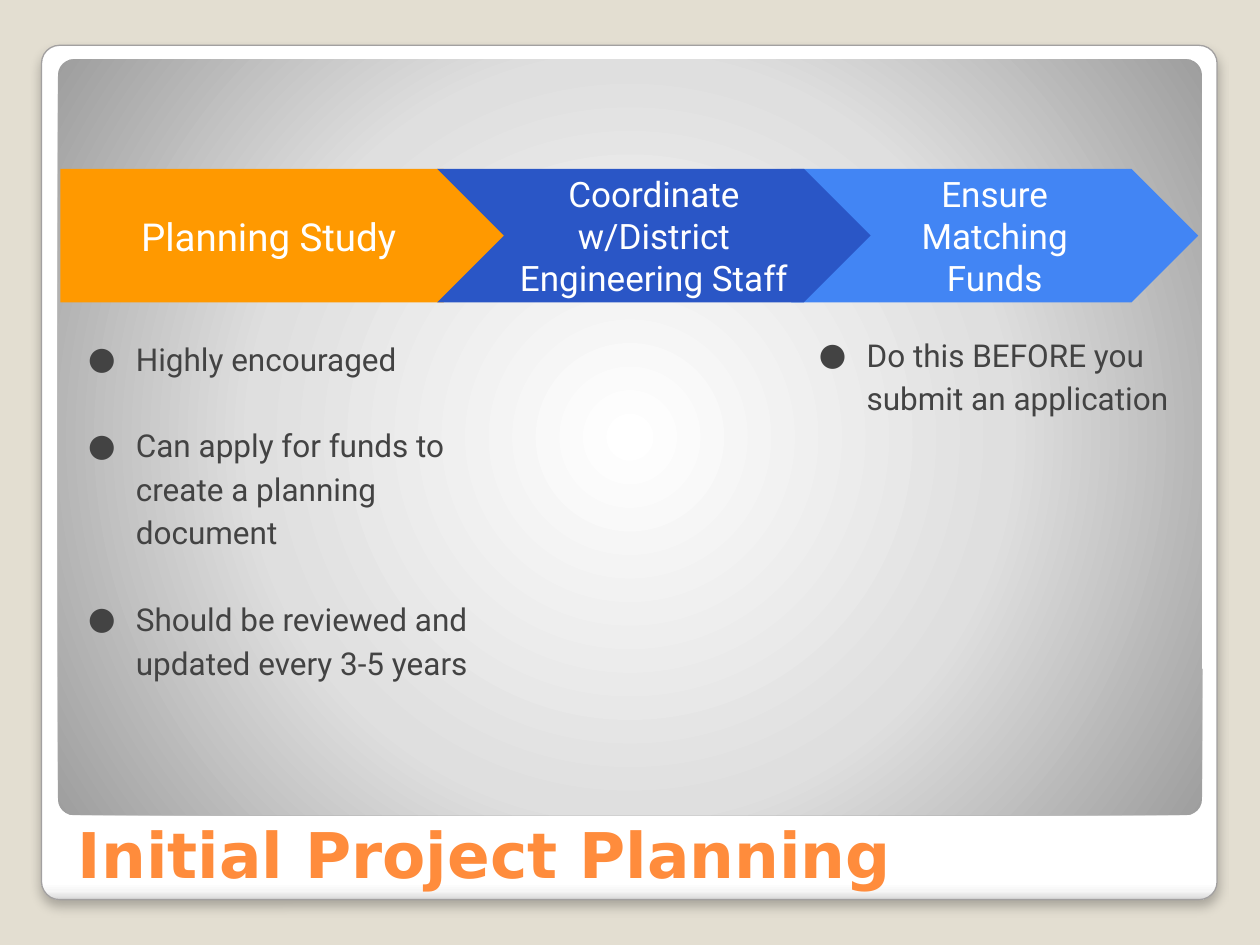
from lxml import etree
from pptx import Presentation
from pptx.dml.color import RGBColor
from pptx.enum import shapes, text
from pptx.oxml import ns
from pptx.util import Inches, Pt

BACKGROUND = RGBColor(0xE3, 0xDE, 0xD1)
FRAME_LINE = RGBColor(0xA2, 0xA0, 0xA0)
TITLE_ORANGE = RGBColor(0xFF, 0x8C, 0x3C)
ORANGE = RGBColor(0xFF, 0x99, 0x00)
NAVY = RGBColor(0x2A, 0x56, 0xC6)
BLUE = RGBColor(0x42, 0x85, 0xF4)
WHITE = RGBColor(0xFF, 0xFF, 0xFF)
GREY = RGBColor(0x43, 0x43, 0x43)

TITLE = "Initial Project Planning"
ARROW, CHEVRON = shapes.MSO_SHAPE.PENTAGON, shapes.MSO_SHAPE.CHEVRON
# Steps from back to front: label, outline, left, width, colour, text size
STEPS = [
    ("Ensure Matching Funds", CHEVRON, 6.28, 3.23, BLUE, 20),
    ("Planning Study", ARROW, 0.48, 3.57, ORANGE, 22),
    ("Coordinate w/District Engineering Staff", CHEVRON, 3.47, 3.44, NAVY, 20),
]
STEP_TOP, STEP_HEIGHT = 1.34, 1.06
# Notes under the steps: box, bullets
NOTES = [
    ((6.28, 2.52, 3.23, 1.39), ["Do this BEFORE you submit an application"]),
    ((0.48, 2.55, 3.38, 3.92), [
        "Highly encouraged",
        "Can apply for funds to create a planning document",
        "Should be reviewed and updated every 3-5 years",
    ]),
]
# Gradients: (position in percent, colour) stops and the direction
FRAME_STOPS = [(0, WHITE), (98, WHITE), (99, "F6F6F6"), (100, "D8D8D8")]
FRAME_WAY = '<a:lin ang="5400000" scaled="0"/>'
PANEL_STOPS = [(0, WHITE), (55, "DFDFDF"), (100, "9E9E9E")]
PANEL_WAY = ('<a:path path="circle">'
             '<a:fillToRect l="50000" t="50000" r="50000" b="50000"/></a:path>')
SHADOW = ('<a:outerShdw {} blurRad="76200" dist="50800" dir="5400000" algn="t" '
          'rotWithShape="0"><a:srgbClr val="000000"><a:alpha val="25000"/>'
          '</a:srgbClr></a:outerShdw>')


def from_xml(markup):
    return etree.fromstring(markup.format(ns.nsdecls("a")))


def add_outline(slide, kind, box, adjust):
    shape = slide.shapes.add_shape(kind, *map(Inches, box))
    shape.adjustments[0] = adjust
    shape.shadow.inherit = False
    shape.line.fill.background()
    return shape


def fill_gradient(shape, stops, way):
    shape.fill.background()
    marks = "".join(f'<a:gs pos="{pos * 1000}"><a:srgbClr val="{colour}"/></a:gs>'
                    for pos, colour in stops)
    plain = shape._element.spPr.find(ns.qn("a:noFill"))
    plain.getparent().replace(plain, from_xml(
        "<a:gradFill {} rotWithShape=\"1\"><a:gsLst>" + marks + "</a:gsLst>"
        + way + "</a:gradFill>"))


def write(shape, lines, size, colour, font="Roboto", bold=False, inset=0.1,
          anchor=text.MSO_ANCHOR.TOP, align=text.PP_ALIGN.LEFT, bullet=None):
    frame = shape.text_frame
    frame.word_wrap = True
    frame.vertical_anchor = anchor
    frame.margin_left = frame.margin_right = Inches(0.1)
    frame.margin_top = frame.margin_bottom = Inches(inset)
    for number, line in enumerate(lines):
        para = frame.add_paragraph() if number else frame.paragraphs[0]
        para.alignment = align
        run = para.add_run()
        run.text = line
        run.font.name, run.font.size, run.font.bold = font, Pt(size), bold
        run.font.color.rgb = colour
        if bullet:
            para.line_spacing = 1.15
            if number:
                para.space_before = Pt(24.8)
            props = para._p.get_or_add_pPr()
            props.set("marL", str(Inches(0.5)))
            props.set("indent", str(-Inches(0.38)))
            props.append(from_xml(
                f'<a:buClr {{}}><a:srgbClr val="{colour}"/></a:buClr>'))
            props.append(from_xml(f'<a:buFont {{}} typeface="{font}"/>'))
            props.append(from_xml(f'<a:buChar {{}} char="{bullet}"/>'))


def main():
    deck = Presentation()
    deck.slide_width, deck.slide_height = Inches(10), Inches(7.5)
    slide = deck.slides.add_slide(deck.slide_layouts[6])
    slide.background.fill.solid()
    slide.background.fill.fore_color.rgb = BACKGROUND

    # Framed panel
    rounded = shapes.MSO_SHAPE.ROUNDED_RECTANGLE
    frame = add_outline(slide, rounded, (0.33, 0.36, 9.33, 6.78), 0.021)
    fill_gradient(frame, FRAME_STOPS, FRAME_WAY)
    frame.line.color.rgb = FRAME_LINE
    frame.line.width = Pt(0.75)
    frame._element.spPr.find(ns.qn("a:effectLst")).append(from_xml(SHADOW))
    panel = add_outline(slide, rounded, (0.46, 0.47, 9.08, 6), 0.021)
    fill_gradient(panel, PANEL_STOPS, PANEL_WAY)

    # Title
    title = slide.shapes.add_textbox(*map(Inches, (0.52, 5.97, 8.95, 1.15)))
    write(title, [TITLE], 36, TITLE_ORANGE, font="DejaVu Sans", bold=True,
          inset=0.05, anchor=text.MSO_ANCHOR.BOTTOM)

    # Process steps
    for label, kind, left, width, colour, size in STEPS:
        step = add_outline(slide, kind, (left, STEP_TOP, width, STEP_HEIGHT), 0.5)
        step.fill.solid()
        step.fill.fore_color.rgb = colour
        write(step, [label], size, WHITE, anchor=text.MSO_ANCHOR.MIDDLE,
              align=text.PP_ALIGN.CENTER)

    # Bulleted notes
    for box, bullets in NOTES:
        note = slide.shapes.add_textbox(*map(Inches, box))
        write(note, bullets, 18, GREY, bullet="●")

    deck.save("out.pptx")


if __name__ == "__main__":
    main()
